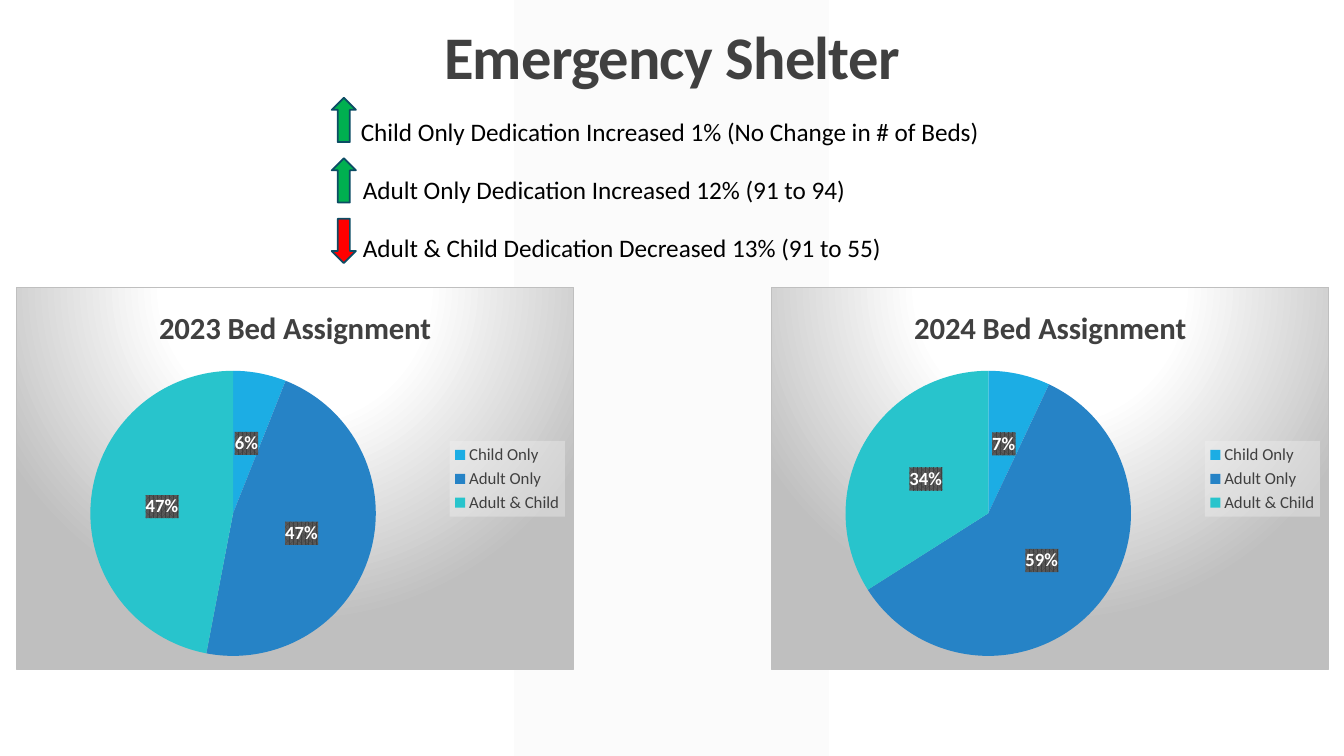
from lxml.etree import SubElement
from pptx import Presentation
from pptx.chart.data import CategoryChartData
from pptx.dml.color import RGBColor
from pptx.enum.chart import XL_CHART_TYPE, XL_LABEL_POSITION, XL_LEGEND_POSITION
from pptx.enum.shapes import MSO_SHAPE
from pptx.enum.text import MSO_ANCHOR, PP_ALIGN
from pptx.oxml import parse_xml
from pptx.oxml.ns import nsdecls, qn
from pptx.util import Inches, Pt

FONT = "Calibri"
WHITE = RGBColor(0xFF, 0xFF, 0xFF)
BLACK = RGBColor(0x00, 0x00, 0x00)
DARK = RGBColor(0x40, 0x40, 0x40)
PALE = RGBColor(0xF2, 0xF2, 0xF2)
GREEN = RGBColor(0x00, 0xB0, 0x50)
RED = RGBColor(0xFF, 0x00, 0x00)
OUTLINE = RGBColor(0x0C, 0x4C, 0x64)
SLICES = [RGBColor(0x1C, 0xAD, 0xE4), RGBColor(0x26, 0x83, 0xC6), RGBColor(0x28, 0xC4, 0xCC)]

CHART_FILL = """<a:gradFill><a:gsLst>
<a:gs pos="0"><a:srgbClr val="FFFFFF"/></a:gs>
<a:gs pos="39000"><a:srgbClr val="FFFFFF"/></a:gs>
<a:gs pos="100000"><a:srgbClr val="BFBFBF"/></a:gs></a:gsLst>
<a:path path="circle"><a:fillToRect l="50000" t="-80000" r="50000" b="180000"/></a:path>
</a:gradFill><a:ln w="9525"><a:solidFill><a:srgbClr val="BFBFBF"/></a:solidFill></a:ln>"""
LEGEND_FILL = '<a:solidFill><a:srgbClr val="F2F2F2"><a:alpha val="39000"/></a:srgbClr></a:solidFill>'
LABEL_FILL = """<a:pattFill prst="pct75"><a:fgClr><a:srgbClr val="404040"/></a:fgClr>
<a:bgClr><a:srgbClr val="595959"/></a:bgClr></a:pattFill>"""


def style_font(font, size, color, bold=False):
    font.name, font.size, font.bold = FONT, Pt(size), bold
    font.color.rgb = color


def paint_part(element, fill):
    sp_pr = parse_xml(f"<c:spPr {nsdecls('c', 'a')}>{fill}</c:spPr>")
    element.find(qn("c:txPr")).addprevious(sp_pr)


prs = Presentation()
prs.slide_width, prs.slide_height = Inches(13.33), Inches(7.5)
s = prs.slides.add_slide(prs.slide_layouts[6])

band = s.shapes.add_shape(MSO_SHAPE.PARALLELOGRAM, Inches(5.1), 0, Inches(3.12), prs.slide_height)
band.adjustments[0] = 0
band.shadow.inherit = False
band.fill.solid()
band.fill.fore_color.rgb = PALE
band.line.fill.background()
SubElement(band._element.spPr.find(".//" + qn("a:srgbClr")), qn("a:alpha"), val="30000")

title = s.shapes.add_textbox(0, Inches(0.17), prs.slide_width, Inches(0.8))
tf = title.text_frame
tf.word_wrap = True
tf.vertical_anchor = MSO_ANCHOR.BOTTOM
tf.text = "Emergency Shelter"
p = tf.paragraphs[0]
p.alignment = PP_ALIGN.CENTER
p.line_spacing = 0.9
r = p.runs[0]
style_font(r.font, 43.2, DARK, True)
r._r.get_or_add_rPr().set("spc", "-50")

charts = [
    (0.16, "2023 Bed Assignment", (6, 47, 47)),
    (7.65, "2024 Bed Assignment", (7, 59, 34)),
]
for left, heading, values in charts:
    data = CategoryChartData()
    data.categories = ["Child Only", "Adult Only", "Adult & Child"]
    data.add_series(heading, values)
    chart = s.shapes.add_chart(XL_CHART_TYPE.PIE, Inches(left), Inches(2.85),
                               Inches(5.53), Inches(3.8), data).chart
    style_font(chart.font, 10, BLACK)
    paint_part(chart._chartSpace, CHART_FILL)

    chart.has_title = True
    tf = chart.chart_title.text_frame
    tf.text = heading
    style_font(tf.paragraphs[0].runs[0].font, 22, DARK, True)
    chart.chart_title.include_in_layout = False

    chart.has_legend = True
    legend = chart.legend
    legend.position = XL_LEGEND_POSITION.RIGHT
    legend.include_in_layout = False
    style_font(legend.font, 12, DARK)
    paint_part(legend._element, LEGEND_FILL)

    plot = chart.plots[0]
    plot.vary_by_categories = True
    for i, color in enumerate(SLICES):
        fill = plot.series[0].points[i].format.fill
        fill.solid()
        fill.fore_color.rgb = color

    labels = plot.series[0].data_labels
    labels.show_percentage = True
    labels.show_value = False
    labels.number_format = "0%"
    labels.number_format_is_linked = False
    labels.position = XL_LABEL_POSITION.CENTER
    style_font(labels.font, 13.3, WHITE, True)
    paint_part(labels._element, LABEL_FILL)

changes = [
    ("Child Only Dedication Increased 1% (No Change in # of Beds)", 3.48, 6.66, GREEN, 0),
    ("Adult Only Dedication Increased 12% (91 to 94)", 3.5, 6.34, GREEN, 0),
    ("Adult & Child Dedication Decreased 13% (91 to 55)", 3.5, 6.34, RED, 180),
]
for row, (text, left, width, color, angle) in enumerate(changes):
    arrow = s.shapes.add_shape(MSO_SHAPE.UP_ARROW, Inches(3.29), Inches(0.97 + 0.6 * row),
                               Inches(0.24), Inches(0.44))
    arrow.rotation = angle
    arrow.shadow.inherit = False
    arrow.fill.solid()
    arrow.fill.fore_color.rgb = color
    arrow.line.color.rgb = OUTLINE
    arrow.line.width = Pt(1.25)

    note = s.shapes.add_textbox(Inches(left), Inches(1.1 + 0.58 * row), Inches(width), Inches(0.4))
    tf = note.text_frame
    tf.word_wrap = True
    tf.text = text
    style_font(tf.paragraphs[0].runs[0].font, 18, BLACK)

prs.save("out.pptx")
